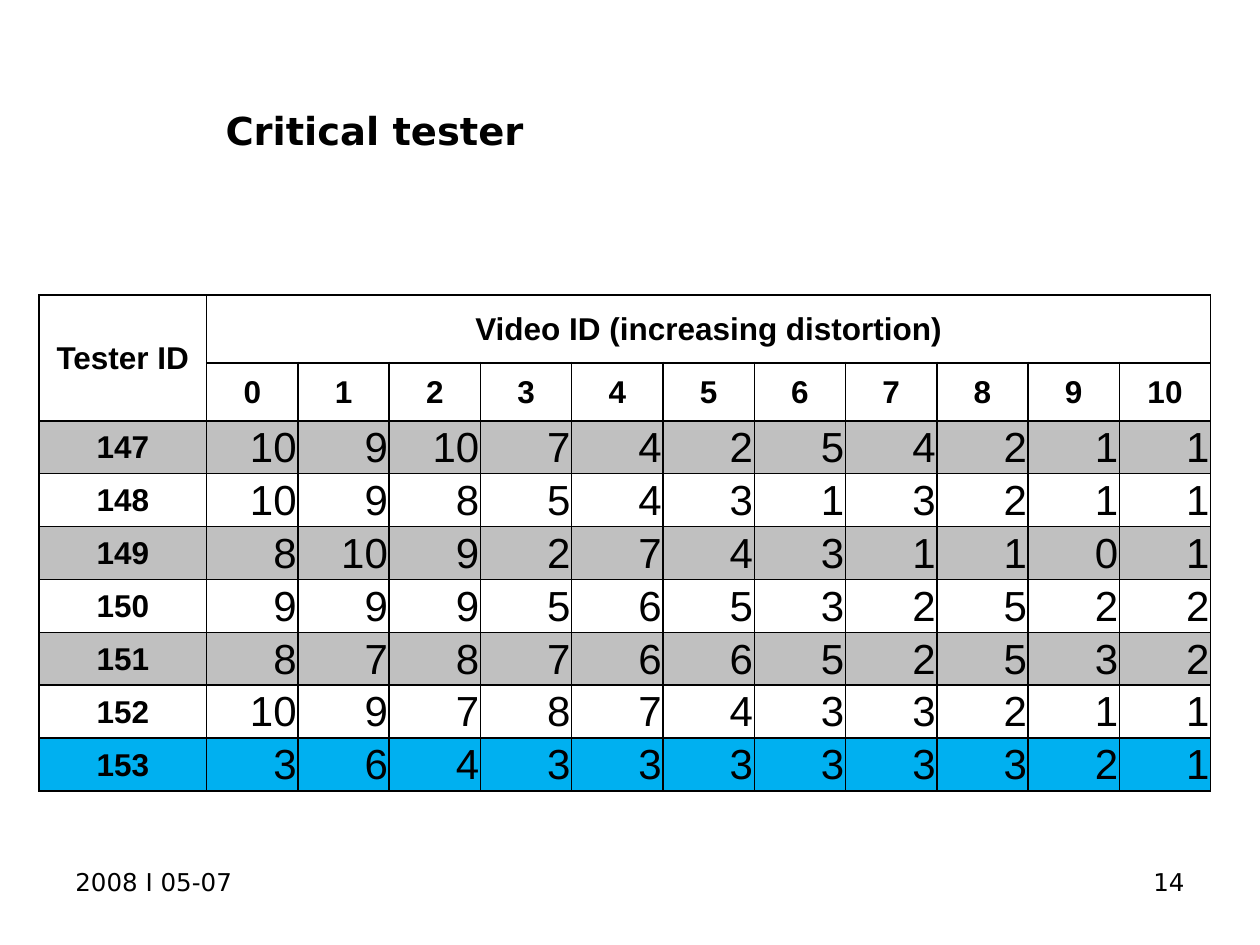
import pptx
import pptx.dml.color
import pptx.enum.text
import pptx.util
from lxml import etree
from pptx.oxml.ns import qn

Inches = pptx.util.Inches
Align = pptx.enum.text.PP_ALIGN
Anchor = pptx.enum.text.MSO_ANCHOR

TESTER_SCORES = {
    147: [10, 9, 10, 7, 4, 2, 5, 4, 2, 1, 1],
    148: [10, 9, 8, 5, 4, 3, 1, 3, 2, 1, 1],
    149: [8, 10, 9, 2, 7, 4, 3, 1, 1, 0, 1],
    150: [9, 9, 9, 5, 6, 5, 3, 2, 5, 2, 2],
    151: [8, 7, 8, 7, 6, 6, 5, 2, 5, 3, 2],
    152: [10, 9, 7, 8, 7, 4, 3, 3, 2, 1, 1],
    153: [3, 6, 4, 3, 3, 3, 3, 3, 3, 2, 1],
}
CRITICAL_TESTER = 153
HEADER_ROWS = 2


def color(hex_value):
    return pptx.dml.color.RGBColor.from_string(hex_value)


class SlideBuilder:
    text_color = "000000"
    band_color = "C0C0C0"
    highlight_color = "00B0F0"
    title_format = {"name": "DejaVu Sans", "size": pptx.util.Pt(22), "bold": True}
    footer_format = {"name": "DejaVu Sans", "size": pptx.util.Pt(14), "bold": False}
    label_format = {"name": "Arial", "size": pptx.util.Pt(18), "bold": True}
    score_format = {"name": "Arial", "size": pptx.util.Pt(24), "bold": False}
    cell_layout = {
        "margin_left": Inches(0.01),
        "margin_top": Inches(0.01),
        "margin_right": Inches(0.01),
        "margin_bottom": 0,
        "vertical_anchor": Anchor.MIDDLE,
    }

    def __init__(self, presentation):
        self.slide = presentation.slides.add_slide(presentation.slide_layouts[5])

    def add_text(self, text_frame, text, text_format, alignment):
        paragraph = text_frame.paragraphs[0]
        paragraph.alignment = alignment
        run = paragraph.add_run()
        run.text = str(text)
        for name, value in text_format.items():
            setattr(run.font, name, value)
        run.font.color.rgb = color(self.text_color)

    def title(self, text, left, top, width, height):
        shape = self.slide.shapes.title
        shape.left, shape.top = Inches(left), Inches(top)
        shape.width, shape.height = Inches(width), Inches(height)
        shape.text_frame.vertical_anchor = Anchor.MIDDLE
        self.add_text(shape.text_frame, text, self.title_format, Align.LEFT)

    def footer(self, text, left, alignment):
        shape = self.slide.shapes.add_textbox(
            Inches(left), Inches(6.83), Inches(2.33), Inches(0.52))
        shape.text_frame.word_wrap = True
        self.add_text(shape.text_frame, text, self.footer_format, alignment)

    def table(self, left, top, column_widths, row_heights):
        table = self.slide.shapes.add_table(
            len(row_heights), len(column_widths), Inches(left), Inches(top),
            Inches(sum(column_widths)), Inches(sum(row_heights))).table
        table.first_row = table.horz_banding = False
        for column, width in zip(table.columns, column_widths):
            column.width = Inches(width)
        for row, height in zip(table.rows, row_heights):
            row.height = Inches(height)
        return table

    def cell(self, cell, text, text_format, alignment):
        for name, value in self.cell_layout.items():
            setattr(cell, name, value)
        self.add_text(cell.text_frame, text, text_format, alignment)

    def borders(self, cell, top_width, bottom_width):
        properties = cell._tc.get_or_add_tcPr()
        widths = {"a:lnL": 1, "a:lnR": 1, "a:lnT": top_width, "a:lnB": bottom_width}
        for tag, width in widths.items():
            line = etree.SubElement(properties, qn(tag), w=str(pptx.util.Pt(width)))
            fill = etree.SubElement(line, qn("a:solidFill"))
            etree.SubElement(fill, qn("a:srgbClr"), val=self.text_color)

    def fill(self, cell, fill_color):
        if fill_color:
            cell.fill.solid()
            cell.fill.fore_color.rgb = color(fill_color)
        else:
            cell.fill.background()

    def score_table(self):
        video_count = len(TESTER_SCORES[CRITICAL_TESTER])
        table = self.table(
            0.31, 2.34, [1.33] + [7.97 / video_count] * video_count,
            [0.54, 0.46] + [0.42] * len(TESTER_SCORES))

        # Borders are heavier around the video number row
        row_fills = [None] * HEADER_ROWS
        for index, tester in enumerate(TESTER_SCORES):
            band = self.band_color if index % 2 == 0 else None
            row_fills.append(self.highlight_color if tester == CRITICAL_TESTER else band)
        for row_index, row in enumerate(table.rows):
            for cell in row.cells:
                self.borders(cell, 1.5 if row_index in (1, 2) else 1,
                             1.5 if row_index in (0, 1) else 1)
                self.fill(cell, row_fills[row_index])

        # Header rows
        table.cell(0, 0).merge(table.cell(1, 0))
        table.cell(0, 1).merge(table.cell(0, video_count))
        self.cell(table.cell(0, 0), "Tester ID", self.label_format, Align.CENTER)
        self.cell(table.cell(0, 1), "Video ID (increasing distortion)",
                  self.label_format, Align.CENTER)
        for video in range(video_count):
            self.cell(table.cell(1, video + 1), video, self.label_format, Align.CENTER)

        # One row of scores per tester
        for row_index, (tester, scores) in enumerate(TESTER_SCORES.items(), HEADER_ROWS):
            self.cell(table.cell(row_index, 0), tester, self.label_format, Align.CENTER)
            for column_index, score in enumerate(scores, 1):
                self.cell(table.cell(row_index, column_index), score,
                          self.score_format, Align.RIGHT)


def main():
    presentation = pptx.Presentation()
    presentation.slide_width = Inches(10)
    presentation.slide_height = Inches(7.5)
    builder = SlideBuilder(presentation)

    # Title and footer
    builder.title("Critical tester", 1.69, 0.52, 7.81, 1.03)
    builder.footer("2008 I 05-07", 0.5, Align.LEFT)
    builder.footer("14", 7.17, Align.RIGHT)

    # Scores by tester and video
    builder.score_table()

    presentation.save("out.pptx")


if __name__ == "__main__":
    main()
